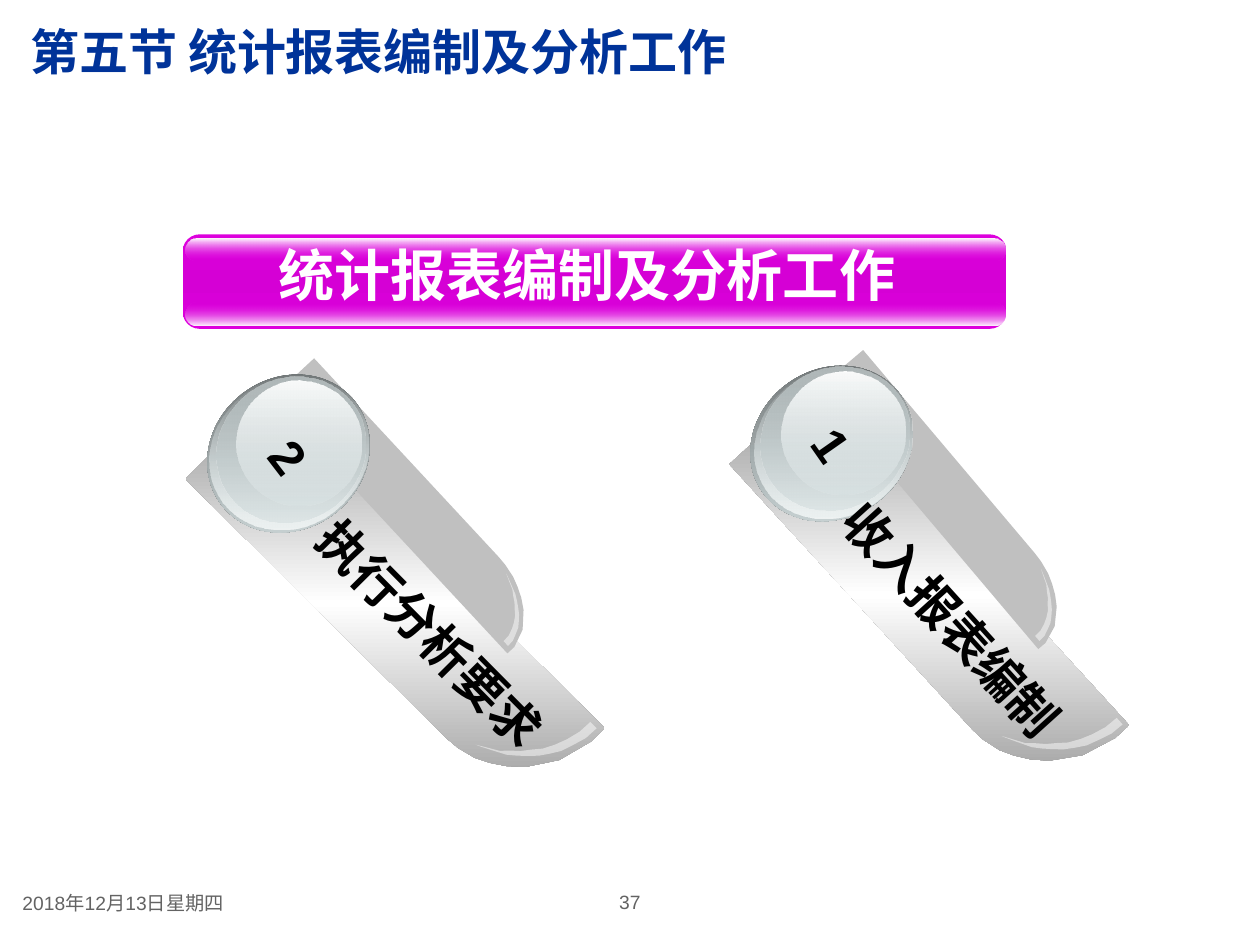
from dataclasses import dataclass
from typing import NamedTuple

from pptx import Presentation
from pptx.dml.color import RGBColor
from pptx.enum.shapes import MSO_SHAPE
from pptx.enum.text import MSO_ANCHOR, PP_ALIGN
from pptx.oxml import parse_xml
from pptx.oxml.ns import nsdecls, qn
from pptx.util import Inches, Pt


class Stop(NamedTuple):
    position: int
    color: str
    opacity: int = 100


class Frame(NamedTuple):
    column: float
    row: float
    columns: float
    rows: float


class TextStyle(NamedTuple):
    size: int
    color: str
    bold: bool = True


@dataclass(frozen=True)
class Theme:
    font: str = "Arial"
    title: TextStyle = TextStyle(28, "003399")
    banner_text: TextStyle = TextStyle(32, "FFFFFF")
    label: TextStyle = TextStyle(28, "000000")
    footer: TextStyle = TextStyle(11, "636363", False)
    strip: tuple = (Stop(0, "969696"), Stop(50, "FFFFFF"), Stop(100, "969696"))
    arm: tuple = (Stop(0, "C0C0C0"),)
    gleam: tuple = (Stop(0, "FFFFFF", 49),)
    disc_layers: tuple = (
        (Stop(0, "636869"), Stop(100, "D6E1E2")),
        (Stop(0, "D6E1E2", 0), Stop(100, "F1F5F5")),
        (Stop(0, "AAB2B3"), Stop(100, "D6E1E2", 48)),
        (Stop(0, "FFFFFF"), Stop(100, "D6E1E2", 38)),
    )
    banner: tuple = (Stop(0, "DD00DD"), Stop(50, "D500D5"), Stop(100, "DD00DD"))
    banner_bottom: tuple = (Stop(0, "DD00DD", 0), Stop(100, "FFFFFF"))
    banner_top: tuple = (Stop(0, "FFFFFF"), Stop(100, "DD00DD", 0))


@dataclass(frozen=True)
class Ticket:
    tilt: float
    number: str
    label: str
    strip: Frame
    strip_gleam: Frame
    arm: Frame
    arm_gleam: Frame
    discs: tuple
    label_frame: Frame
    number_frame: Frame


THEME = Theme()
GRID_COLUMNS, GRID_ROWS = 100, 75
SLIDE_WIDTH, SLIDE_HEIGHT = Inches(10), Inches(7.5)
ARM_TURN, DISC_TURN, LABEL_TURN = 2.3, 7.6, 0.5

STRIP_OUTLINE = (
    (1, 0.07), (1, 0.16), (0.99, 0.31), (0.98, 0.46), (0.96, 0.58), (0.94, 0.7),
    (0.91, 0.81), (0.88, 0.89), (0.85, 0.95), (0.81, 0.99), (0.78, 1),
    (0, 1), (0, 0), (1, 0),
)
GLEAM_OUTLINE = (
    (1, 0), (0.99, 0.15), (0.94, 0.28), (0.88, 0.42), (0.8, 0.52), (0.71, 0.62),
    (0.61, 0.7), (0.5, 0.78), (0.39, 0.85), (0.29, 0.89), (0.19, 0.93), (0.06, 0.98),
    (0, 1), (0.11, 0.95), (0.29, 0.87), (0.39, 0.79), (0.49, 0.72), (0.58, 0.63),
    (0.68, 0.54), (0.76, 0.42), (0.82, 0.3), (0.87, 0.15), (0.88, 0),
)
TICKETS = (
    Ticket(
        44.8, "2", "执行分析要求",
        Frame(12.6, 43.2, 37.5, 9.4), Frame(39.6, 54.6, 5.9, 7.7),
        Frame(18.8, 37.8, 27.6, 4.7), Frame(38.1, 46.5, 4.3, 3.8),
        (Frame(16.9, 29.3, 12, 13.4), Frame(17.1, 29.4, 11.7, 13.1),
         Frame(17.5, 29.6, 11.2, 12.2), Frame(18.8, 30.2, 9.9, 9.9)),
        Frame(21.1, 48.4, 28.1, 5.7), Frame(20.6, 34, 5.6, 5.7),
    ),
    Ticket(
        47.5, "1", "收入报表编制",
        Frame(55.4, 42.5, 36.7, 9.4), Frame(81.4, 54.1, 5.8, 7.7),
        Frame(61.9, 37.3, 27.1, 4.7), Frame(80.4, 46.1, 4.3, 3.8),
        (Frame(60.1, 28.5, 11.8, 13.4), Frame(60.4, 28.6, 11.5, 13.1),
         Frame(60.8, 28.7, 11, 12.2), Frame(62.1, 29.4, 9.7, 9.9)),
        Frame(62.5, 47.2, 27.6, 5.7), Frame(63.7, 33, 5.5, 5.7),
    ),
)


def place(frame: Frame) -> tuple:
    column, row = SLIDE_WIDTH / GRID_COLUMNS, SLIDE_HEIGHT / GRID_ROWS
    return (round(frame.column * column), round(frame.row * row),
            round(frame.columns * column), round(frame.rows * row))


def color_xml(stop: Stop) -> str:
    return f'<a:srgbClr val="{stop.color}"><a:alpha val="{stop.opacity * 1000}"/></a:srgbClr>'


def paint(shape, stops: tuple) -> None:
    shape.shadow.inherit = False
    shape.line.fill.background()
    shape.fill.solid()
    if len(stops) == 1:
        markup = f'<a:solidFill {nsdecls("a")}>{color_xml(stops[0])}</a:solidFill>'
    else:
        items = "".join(f'<a:gs pos="{stop.position * 1000}">{color_xml(stop)}</a:gs>' for stop in stops)
        markup = (f'<a:gradFill {nsdecls("a")} rotWithShape="0"><a:gsLst>{items}</a:gsLst>'
                  '<a:lin ang="5400000" scaled="0"/></a:gradFill>')
    properties = shape._element.spPr
    properties.replace(properties.find(qn("a:solidFill")), parse_xml(markup))


def draw_outline(shapes, outline: tuple, frame: Frame, stops: tuple,
                 rotation: float, mirrored: bool = False) -> None:
    left, top, width, height = place(frame)
    points = [(round(left + x * width), round(top + (1 - y if mirrored else y) * height))
              for x, y in outline]
    builder = shapes.build_freeform(*points[0])
    builder.add_line_segments(points[1:], close=True)
    shape = builder.convert_to_shape()
    shape.rotation = rotation
    paint(shape, stops)


def draw_preset(shapes, kind: MSO_SHAPE, frame: Frame, stops: tuple, rotation: float = 0):
    shape = shapes.add_shape(kind, *place(frame))
    shape.rotation = rotation
    paint(shape, stops)
    return shape


def write(shape, text: str, style: TextStyle, alignment=PP_ALIGN.LEFT, anchor=MSO_ANCHOR.TOP) -> None:
    text_frame = shape.text_frame
    text_frame.word_wrap = True
    text_frame.vertical_anchor = anchor
    paragraph = text_frame.paragraphs[0]
    paragraph.alignment = alignment
    paragraph.space_before = Pt(0)
    run = paragraph.add_run()
    run.text = text
    run.font.name = THEME.font
    run.font.size = Pt(style.size)
    run.font.bold = style.bold
    run.font.color.rgb = RGBColor.from_string(style.color)


def draw_text(shapes, frame: Frame, text: str, style: TextStyle, rotation: float = 0,
              alignment=PP_ALIGN.LEFT, anchor=MSO_ANCHOR.TOP) -> None:
    shape = shapes.add_textbox(*place(frame))
    shape.rotation = rotation
    write(shape, text, style, alignment, anchor)


def draw_ticket(slide, ticket: Ticket) -> None:
    shapes = slide.shapes.add_group_shape().shapes
    arm_tilt, disc_tilt = ticket.tilt + ARM_TURN, ticket.tilt + DISC_TURN
    draw_outline(shapes, STRIP_OUTLINE, ticket.strip, THEME.strip, ticket.tilt)
    draw_outline(shapes, GLEAM_OUTLINE, ticket.strip_gleam, THEME.gleam, ticket.tilt)
    draw_outline(shapes, STRIP_OUTLINE, ticket.arm, THEME.arm, arm_tilt, mirrored=True)
    draw_outline(shapes, GLEAM_OUTLINE, ticket.arm_gleam, THEME.gleam, arm_tilt, mirrored=True)
    for frame, stops in zip(ticket.discs, THEME.disc_layers):
        draw_preset(shapes, MSO_SHAPE.OVAL, frame, stops, disc_tilt)
    draw_text(shapes, ticket.label_frame, ticket.label, THEME.label, ticket.tilt + LABEL_TURN)
    draw_text(shapes, ticket.number_frame, ticket.number, THEME.label, disc_tilt)


def draw_banner(slide) -> None:
    shapes = slide.shapes.add_group_shape().shapes
    for frame, stops, corner in (
        (Frame(14.5, 18.6, 65.4, 7.5), THEME.banner, 0.18),
        (Frame(14.7, 24, 65.1, 1.8), THEME.banner_bottom, 0.5),
        (Frame(14.7, 18.9, 65.1, 1.8), THEME.banner_top, 0.5),
    ):
        draw_preset(shapes, MSO_SHAPE.ROUNDED_RECTANGLE, frame, stops).adjustments[0] = corner
    draw_text(slide.shapes, Frame(20.4, 18.6, 52.4, 6.3), "统计报表编制及分析工作",
              THEME.banner_text, alignment=PP_ALIGN.CENTER)


def main() -> None:
    presentation = Presentation()
    presentation.slide_width, presentation.slide_height = SLIDE_WIDTH, SLIDE_HEIGHT
    slide = presentation.slides.add_slide(presentation.slide_layouts[5])
    title = slide.shapes.title
    title.left, title.top, title.width, title.height = place(Frame(1.4, 1.2, 59.4, 5.7))
    write(title, "第五节 统计报表编制及分析工作", THEME.title)
    draw_text(slide.shapes, Frame(0.8, 70, 35, 3.1), "2018年12月13日星期四", THEME.footer,
              anchor=MSO_ANCHOR.BOTTOM)
    draw_text(slide.shapes, Frame(45, 70, 10, 3.1), "37", THEME.footer,
              alignment=PP_ALIGN.CENTER, anchor=MSO_ANCHOR.MIDDLE)
    for ticket in TICKETS:
        draw_ticket(slide, ticket)
    draw_banner(slide)
    presentation.save("out.pptx")


if __name__ == "__main__":
    main()
